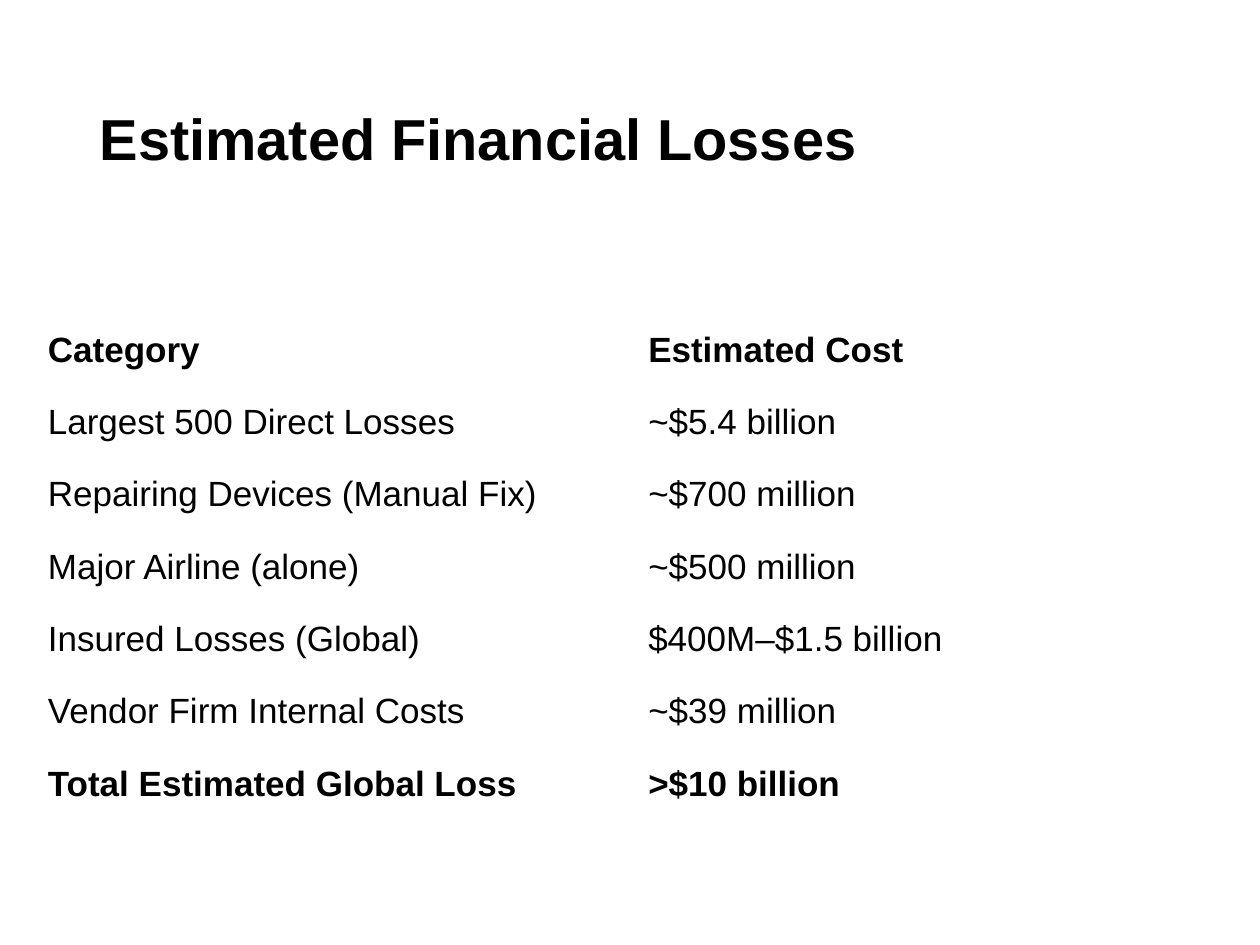
import pptx
import pptx.util
import pptx.dml.color
import pptx.enum.text

deck = pptx.Presentation()
deck.slide_width = pptx.util.Inches(10)
deck.slide_height = pptx.util.Inches(7.5)
width, height = deck.slide_width, deck.slide_height
slide = deck.slides.add_slide(deck.slide_layouts[5])


def color(value):
    return pptx.dml.color.RGBColor.from_string(value)


def write(paragraph, text, size, bold):
    paragraph.alignment = pptx.enum.text.PP_ALIGN.LEFT
    run = paragraph.add_run()
    run.text = text
    run.font.name = "Arial"
    run.font.size = pptx.util.Pt(size)
    run.font.bold = bold
    run.font.color.rgb = color("000000")


slide.background.fill.solid()
slide.background.fill.fore_color.rgb = color("FFFFFF")

heading = slide.shapes.title
heading.left, heading.top = int(width * 0.069), int(height * 0.0533)
heading.width, heading.height = int(width * 0.862), int(height * 0.1933)
heading.text_frame.vertical_anchor = pptx.enum.text.MSO_ANCHOR.MIDDLE
heading.text_frame.word_wrap = True
heading.text_frame.paragraphs[0].line_spacing = 0.9
write(heading.text_frame.paragraphs[0], "Estimated Financial Losses", 33, True)

losses = [
    ("Category", "Estimated Cost"),
    ("Largest 500 Direct Losses", "~$5.4 billion"),
    ("Repairing Devices (Manual Fix)", "~$700 million"),
    ("Major Airline (alone)", "~$500 million"),
    ("Insured Losses (Global)", "$400M–$1.5 billion"),
    ("Vendor Firm Internal Costs", "~$39 million"),
    ("Total Estimated Global Loss", ">$10 billion"),
]
cost_table = slide.shapes.add_table(
    len(losses), 2,
    int(width * 0.028), int(height * 0.332),
    int(width * 0.953), int(height * 0.536),
).table
cost_table.horz_banding = False

for row, entry in enumerate(losses):
    for column, text in enumerate(entry):
        cell = cost_table.cell(row, column)
        cell.fill.background()
        cell.vertical_anchor = pptx.enum.text.MSO_ANCHOR.MIDDLE
        write(cell.text_frame.paragraphs[0], text, 20, row in (0, len(losses) - 1))

deck.save("out.pptx")
